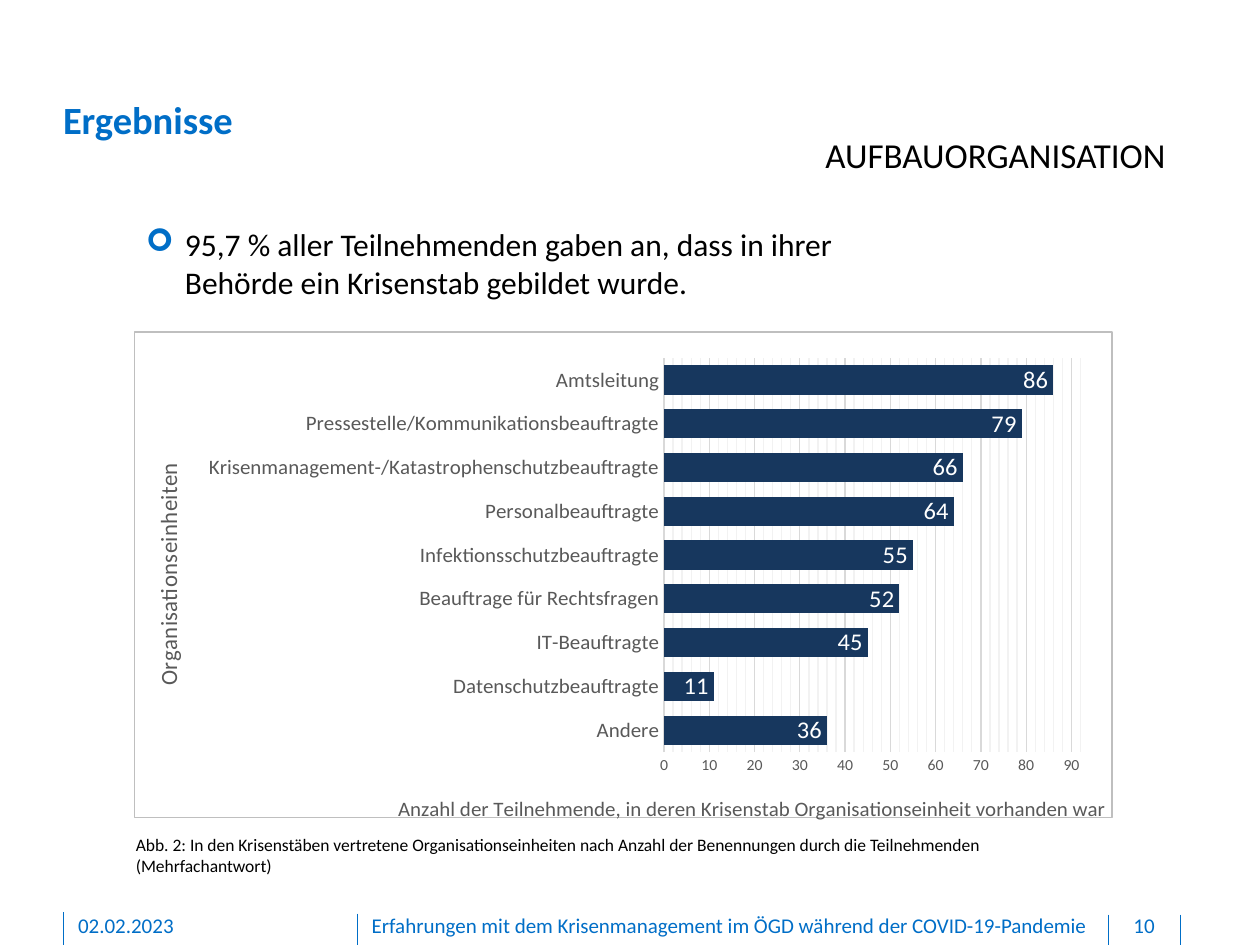
"""Build the slide on crisis team organisation with its bar chart."""
from dataclasses import dataclass
from typing import Optional

from lxml.etree import SubElement
from pptx import Presentation
from pptx.chart.data import CategoryChartData
from pptx.dml.color import RGBColor
from pptx.enum.chart import XL_CHART_TYPE, XL_LABEL_POSITION, XL_TICK_MARK
from pptx.enum.shapes import MSO_CONNECTOR
from pptx.enum.text import PP_ALIGN
from pptx.oxml import parse_xml
from pptx.oxml.ns import nsdecls, qn
from pptx.util import Inches, Pt

BLUE = RGBColor(0x00, 0x6E, 0xC7)
NAVY = RGBColor(0x17, 0x37, 0x5E)
BLACK = RGBColor(0x00, 0x00, 0x00)
WHITE = RGBColor(0xFF, 0xFF, 0xFF)
GRAY = RGBColor(0x59, 0x59, 0x59)
GRID = RGBColor(0xD9, 0xD9, 0xD9)
MINOR_GRID = RGBColor(0xF2, 0xF2, 0xF2)
BORDER = RGBColor(0xBF, 0xBF, 0xBF)
FONT = "Calibri"
DEFAULT_INSETS = (0.1, 0.05, 0.1, 0.05)
FOOTER_INSETS = (0, 0, 0, 0.05)


@dataclass
class Label:
    text: str
    left: float
    top: float
    width: float
    height: float
    size: float
    color: RGBColor = BLACK
    bold: bool = False
    align: PP_ALIGN = PP_ALIGN.LEFT
    insets: tuple = DEFAULT_INSETS
    bullet: str = ""


@dataclass
class Divider:
    left: float
    top: float


LABELS = [
    Label("02.02.2023", 0.62, 7.24, 2.03, 0.21, 12, BLUE, insets=FOOTER_INSETS),
    Label("Erfahrungen mit dem Krisenmanagement im ÖGD während der COVID-19-Pandemie",
          2.95, 7.24, 5.75, 0.21, 12, BLUE, insets=FOOTER_INSETS),
    Label("10", 8.81, 7.24, 0.54, 0.21, 12, BLUE, align=PP_ALIGN.CENTER, insets=FOOTER_INSETS),
    Label("Ergebnisse", 0.5, 0.76, 8.85, 0.37, 22, BLUE, bold=True, insets=(0, 0, 0, 0)),
    Label("AUFBAUORGANISATION", 3.51, 1.01, 5.84, 0.44, 20, align=PP_ALIGN.RIGHT),
    Label("95,7 % aller Teilnehmenden gaben an, dass in ihrer Behörde ein Krisenstab gebildet wurde.",
          1.06, 1.74, 6.02, 0.71, 18, bullet="➢"),
    Label("Abb. 2: In den Krisenstäben vertretene Organisationseinheiten nach Anzahl der "
          "Benennungen durch die Teilnehmenden (Mehrfachantwort)",
          0.98, 6.57, 7.77, 0.44, 10),
]
DIVIDERS = [Divider(2.84, 7.25), Divider(0.5, 7.24), Divider(9.37, 7.26), Divider(8.8, 7.26)]
UNITS = {
    "Andere": 36,
    "Datenschutzbeauftragte": 11,
    "IT-Beauftragte": 45,
    "Beauftrage für Rechtsfragen": 52,
    "Infektionsschutzbeauftragte": 55,
    "Personalbeauftragte": 64,
    "Krisenmanagement-/Katastrophenschutzbeauftragte": 66,
    "Pressestelle/Kommunikationsbeauftragte": 79,
    "Amtsleitung": 86,
}


def style_font(font, size: float, color: RGBColor, bold: bool = False) -> None:
    font.name = FONT
    font.size = Pt(size)
    font.bold = bold
    font.color.rgb = color


def style_line(line, color: RGBColor, width: float) -> None:
    line.color.rgb = color
    line.width = Pt(width)


def add_label(slide, label: Label) -> None:
    shape = slide.shapes.add_textbox(Inches(label.left), Inches(label.top),
                                     Inches(label.width), Inches(label.height))
    frame = shape.text_frame
    frame.word_wrap = True
    (frame.margin_left, frame.margin_top,
     frame.margin_right, frame.margin_bottom) = map(Inches, label.insets)
    paragraph = frame.paragraphs[0]
    paragraph.text = label.text
    paragraph.alignment = label.align
    if label.bullet:
        properties = paragraph._p.get_or_add_pPr()
        properties.set("marL", str(Inches(0.31)))
        properties.set("indent", str(-Inches(0.31)))
        color = SubElement(properties, qn("a:buClr"))
        SubElement(color, qn("a:srgbClr"), val=str(BLUE))
        SubElement(properties, qn("a:buFont"), typeface="Wingdings")
        SubElement(properties, qn("a:buChar"), char=label.bullet)
    style_font(paragraph.font, label.size, label.color, label.bold)


def add_divider(slide, divider: Divider) -> None:
    connector = slide.shapes.add_connector(
        MSO_CONNECTOR.STRAIGHT, Inches(divider.left), Inches(divider.top),
        Inches(divider.left), Inches(7.5))
    style_line(connector.line, BLUE, 0.5)
    SubElement(connector._element.spPr, qn("a:effectLst"))


def place(element, index: int, x: float, y: float, size: Optional[tuple] = None) -> None:
    """Give a chart part a fixed place, in fractions of the chart."""
    for old in element.findall(qn("c:layout")):
        element.remove(old)
    values = {"xMode": "edge", "yMode": "edge", "x": x, "y": y}
    if size:
        values = {"layoutTarget": "inner", **values, "w": size[0], "h": size[1]}
    layout = parse_xml(f"<c:layout {nsdecls('c')}><c:manualLayout/></c:layout>")
    for name, value in values.items():
        SubElement(layout[0], qn(f"c:{name}"), val=str(value))
    element.insert(index, layout)


def outline_properties(color: RGBColor, width: float):
    return parse_xml(
        f"<c:spPr {nsdecls('c', 'a')}><a:ln w='{Pt(width)}'><a:solidFill>"
        f"<a:srgbClr val='{color}'/></a:solidFill></a:ln></c:spPr>")


def style_axis(axis, title: str, title_size: float, label_size: float,
               x: float, y: float, rotation: int) -> None:
    axis.major_tick_mark = axis.minor_tick_mark = XL_TICK_MARK.NONE
    style_font(axis.tick_labels.font, label_size, GRAY)
    frame = axis.axis_title.text_frame
    frame.text = title
    style_font(frame.paragraphs[0].font, title_size, GRAY)
    element = axis.axis_title._element
    body = element.find(".//" + qn("a:bodyPr"))
    body.set("rot", str(rotation))
    body.set("vert", "horz")
    place(element, 1, x, y)


def add_unit_chart(slide) -> None:
    data = CategoryChartData()
    data.categories = list(UNITS)
    data.add_series("Series 1", list(UNITS.values()))
    chart = slide.shapes.add_chart(XL_CHART_TYPE.BAR_CLUSTERED, Inches(1.06), Inches(2.63),
                                   Inches(7.77), Inches(3.94), data).chart
    chart.has_legend = chart.has_title = False
    style_font(chart.font, 10, BLACK)

    style_axis(chart.category_axis, "Organisationseinheiten", 13.3, 12, 0.014, 0.27, -5400000)
    style_line(chart.category_axis.format.line, GRID, 0.75)
    axis = chart.value_axis
    style_axis(axis, "Anzahl der Teilnehmende, in deren Krisenstab Organisationseinheit vorhanden war",
               12, 9, 0.266, 0.945, 0)
    axis.minimum_scale, axis.maximum_scale = 0, 92
    axis.major_unit, axis.minor_unit = 10, 2
    axis.has_major_gridlines = axis.has_minor_gridlines = True
    axis.format.line.fill.background()
    style_line(axis.major_gridlines.format.line, GRID, 0.75)
    minor_gridlines = axis._element.find(qn("c:minorGridlines"))
    minor_gridlines.append(outline_properties(MINOR_GRID, 0.75))

    plot = chart.plots[0]
    plot.gap_width = plot.overlap = 50
    plot.vary_by_categories = False
    series = plot.series[0]
    series.format.fill.solid()
    series.format.fill.fore_color.rgb = NAVY
    labels = series.data_labels
    labels.show_value = True
    labels.position = XL_LABEL_POSITION.INSIDE_END
    style_font(labels.font, 14, WHITE)

    chart_part = chart._chartSpace.find(qn("c:chart"))
    place(chart_part.find(qn("c:plotArea")), 0, 0.542, 0.054, (0.426, 0.811))
    chart_part.addnext(outline_properties(BORDER, 0.75))


def main() -> None:
    presentation = Presentation()
    presentation.slide_width, presentation.slide_height = Inches(10), Inches(7.5)
    slide = presentation.slides.add_slide(presentation.slide_layouts[6])
    for divider in DIVIDERS:
        add_divider(slide, divider)
    for label in LABELS:
        add_label(slide, label)
    add_unit_chart(slide)
    presentation.save("out.pptx")


if __name__ == "__main__":
    main()
